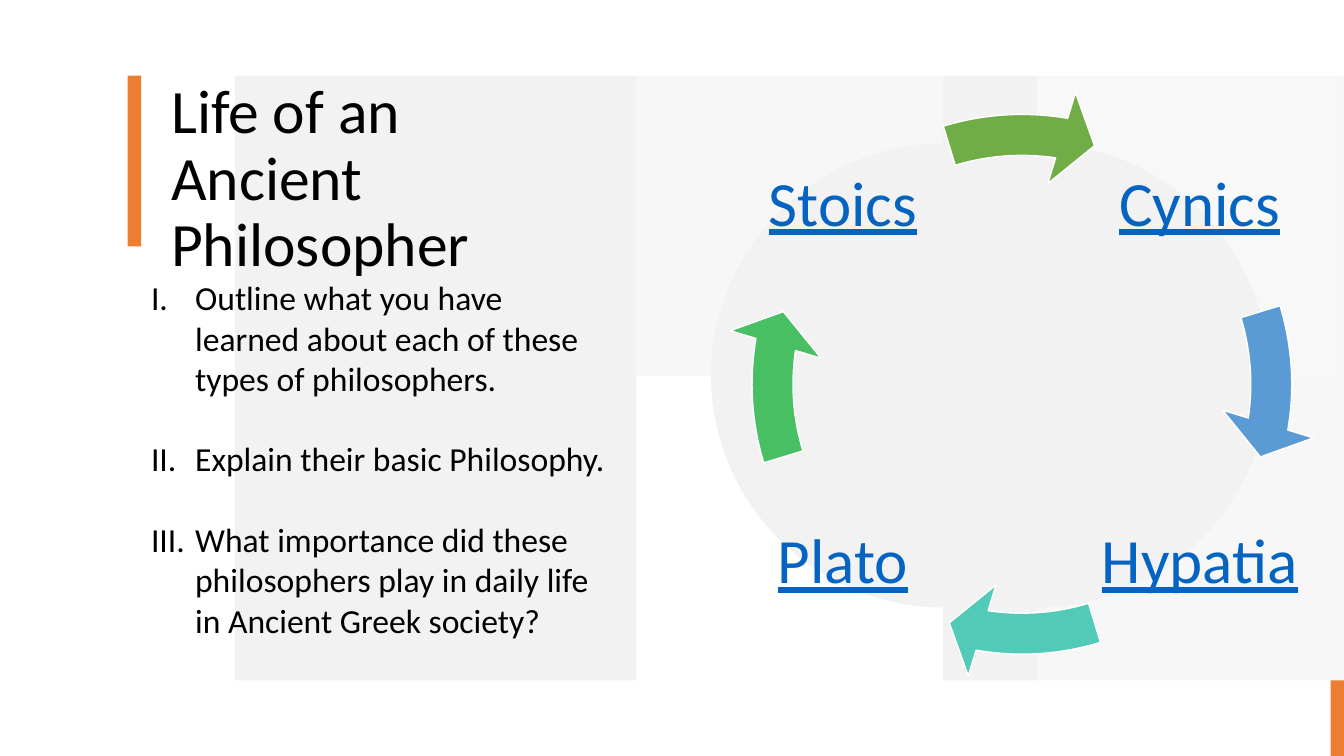
import lxml.etree
import pptx
import pptx.dml.color
import pptx.enum.shapes
import pptx.enum.text
import pptx.oxml.ns
import pptx.util

RGBColor = pptx.dml.color.RGBColor
BLACK = RGBColor(0x00, 0x00, 0x00)
WHITE = RGBColor(0xFF, 0xFF, 0xFF)
PALE_GREY = RGBColor(0xF2, 0xF2, 0xF2)
ORANGE = RGBColor(0xED, 0x7D, 0x31)
LINK_BLUE = RGBColor(0x05, 0x63, 0xC1)
BLUE = RGBColor(0x5B, 0x9B, 0xD5)
TEAL = RGBColor(0x52, 0xCA, 0xB8)
GREEN = RGBColor(0x49, 0xBF, 0x64)
OLIVE = RGBColor(0x70, 0xAD, 0x47)

COLUMNS, ROWS = 40, 30
QUARTER_TURN = 54
FULL_TURN = 4 * QUARTER_TURN
ARC_HANDLE = 0.55


class PhilosopherSlide:
    font = "Calibri"

    def __init__(self, deck):
        self.column = deck.slide_width / COLUMNS
        self.row = deck.slide_height / ROWS
        self.shapes = deck.slides.add_slide(deck.slide_layouts[6]).shapes

    def place(self, column, row):
        return round(column * self.column), round(row * self.row)

    def box(self, column, row, columns, rows):
        return *self.place(column, row), *self.place(columns, rows)

    def paint(self, shape, color, opacity=100):
        shape.shadow.inherit = False
        shape.fill.solid()
        shape.fill.fore_color.rgb = color
        shape.line.fill.background()
        if opacity < 100:
            tint = shape.fill._xPr.find(".//" + pptx.oxml.ns.qn("a:srgbClr"))
            lxml.etree.SubElement(tint, pptx.oxml.ns.qn("a:alpha"), val=str(opacity * 1000))

    def block(self, area, color):
        kind = pptx.enum.shapes.MSO_SHAPE.RECTANGLE
        self.paint(self.shapes.add_shape(kind, *self.box(*area)), color)

    def corner(self, center, across, down, opacity):
        (width, height), (reach, drop) = (9.12, 12.16), (6.9, 9.21)

        def point(x, y):
            return self.place(center[0] + across * x, center[1] + down * y)

        outline = self.shapes.build_freeform(*point(0, height))
        outline.add_line_segments([
            point(width, height), point(width, 0), point(reach, 0),
            point(reach, drop * ARC_HANDLE), point(reach * ARC_HANDLE, drop), point(0, drop),
        ])
        shape = outline.convert_to_shape()
        self.round_last_three(shape)
        self.paint(shape, WHITE, opacity)

    def round_last_three(self, shape):
        qn = pptx.oxml.ns.qn
        steps = shape._element.findall(".//" + qn("a:lnTo"))[3:6]
        curve = lxml.etree.Element(qn("a:cubicBezTo"))
        steps[0].addprevious(curve)
        for step in steps:
            curve.append(step[0])
            step.getparent().remove(step)

    def arrow(self, area, quarter, color):
        kind = pptx.enum.shapes.MSO_SHAPE.CIRCULAR_ARROW
        arrow = self.shapes.add_shape(kind, *self.box(*area))
        head = 5.506 + quarter * QUARTER_TURN
        tail = (205.843 + quarter * QUARTER_TURN) % FULL_TURN
        for index, value in enumerate((0.069, 4.651, head, tail, 0.08)):
            arrow.adjustments[index] = value
        self.paint(arrow, color)
        arrow.line.color.rgb = WHITE
        arrow.line.width = pptx.util.Pt(1)

    def text(self, area, lines, size, color, spacing=1.0, underline=False):
        frame = self.shapes.add_textbox(*self.box(*area)).text_frame
        frame.word_wrap = True
        frame.text = "\n".join(lines)
        for paragraph in frame.paragraphs:
            paragraph.line_spacing = spacing
            for run in paragraph.runs:
                run.font.name = self.font
                run.font.size = pptx.util.Pt(size)
                run.font.color.rgb = color
                run.font.underline = underline
        return frame

    def title(self, area, wording):
        frame = self.text(area, [wording], 44, BLACK, spacing=0.9)
        frame.margin_right = pptx.util.Inches(0.25)

    def label(self, area, name):
        frame = self.text(area, [name], 45, LINK_BLUE, spacing=0.9, underline=True)
        frame.word_wrap = False
        frame.vertical_anchor = pptx.enum.text.MSO_ANCHOR.MIDDLE
        frame.paragraphs[0].alignment = pptx.enum.text.PP_ALIGN.CENTER
        frame.margin_left = frame.margin_right = pptx.util.Inches(0.06)
        frame.margin_top = frame.margin_bottom = pptx.util.Inches(0.06)

    def numbered_list(self, area, items):
        frame = self.text(area, items, 24, BLACK)
        indent = pptx.util.Pt(31.5)
        for index, paragraph in enumerate(frame.paragraphs):
            paragraph.space_before = pptx.util.Pt(28.8 if index else 0)
            properties = paragraph._p.get_or_add_pPr()
            properties.set("marL", str(indent))
            properties.set("indent", str(-indent))
            lxml.etree.SubElement(properties, pptx.oxml.ns.qn("a:buFont"), typeface="+mj-lt")
            lxml.etree.SubElement(properties, pptx.oxml.ns.qn("a:buAutoNum"), type="romanUcPeriod")


def main():
    deck = pptx.Presentation()
    deck.slide_width = pptx.util.Inches(13.333)
    deck.slide_height = pptx.util.Inches(7.5)
    slide = PhilosopherSlide(deck)

    slide.block((7, 3, 33, 24), PALE_GREY)
    slide.title((4.8, 3, 13.5, 6.8), "Life of an Ancient Philosopher")
    slide.block((3.8, 3, 0.4, 6.78), ORANGE)

    left, right, middle = 28.06, 30.87, 14.9
    slide.corner((left, middle), -1, 1, 100)
    slide.corner((left, middle), -1, -1, 46)
    slide.corner((right, middle), 1, 1, 46)
    slide.corner((right, middle), 1, -1, 50)
    slide.block((39.6, 27, 0.4, 3), ORANGE)

    west, east, north, south = 21.97, 32.59, 4, 18.18
    cycle = [
        ("Cynics", east, north, BLUE),
        ("Hypatia", east, south, TEAL),
        ("Plato", west, south, GREEN),
        ("Stoics", west, north, OLIVE),
    ]
    for quarter, (name, column, row, color) in enumerate(cycle):
        slide.label((column, row, 6.24, 8.32), name)
        slide.arrow((21.58, 3.47, 17.67, 23.56), quarter, color)

    slide.numbered_list((4.2, 10.8, 14.34, 14.96), [
        "Outline what you have learned about each of these types of philosophers.",
        "Explain their basic Philosophy.",
        "What importance did these philosophers play in daily life in Ancient Greek society?",
    ])
    deck.save("out.pptx")


if __name__ == "__main__":
    main()
